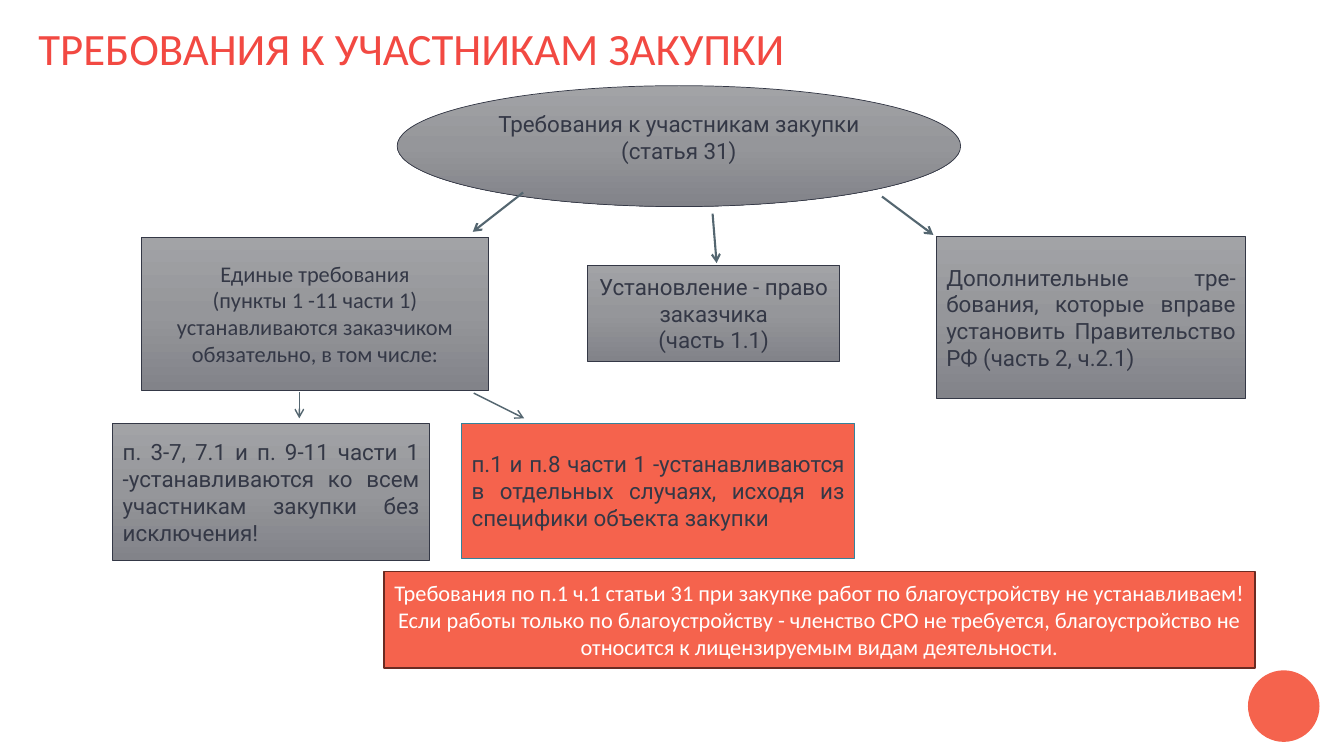
"""Build the slide on requirements for procurement participants."""
from copy import deepcopy
from dataclasses import dataclass

from lxml import etree
from pptx import Presentation
from pptx.dml.color import RGBColor
from pptx.enum.shapes import MSO_CONNECTOR, MSO_SHAPE
from pptx.enum.text import MSO_ANCHOR, PP_ALIGN
from pptx.oxml.ns import qn
from pptx.shapes.autoshape import Shape
from pptx.slide import Slide
from pptx.util import Pt

RECTANGLE, OVAL = MSO_SHAPE.RECTANGLE, MSO_SHAPE.OVAL
STRAIGHT = MSO_CONNECTOR.STRAIGHT
TOP, MIDDLE = MSO_ANCHOR.TOP, MSO_ANCHOR.MIDDLE
CENTER, JUSTIFY = PP_ALIGN.CENTER, PP_ALIGN.JUSTIFY

INK = RGBColor(0x34, 0x38, 0x46)
CORAL = RGBColor(0xF5, 0x63, 0x4D)
TITLE_RED = RGBColor(0xF2, 0x49, 0x42)
TEAL = RGBColor(0x33, 0x82, 0x9B)
BROWN = RGBColor(0x6B, 0x2B, 0x22)
ARROW_GREY = RGBColor(0x54, 0x66, 0x70)
WHITE = RGBColor(0xFF, 0xFF, 0xFF)
GREY_STOPS = (
    (0.0, RGBColor(0xA2, 0xA3, 0xA6)),
    (0.5, RGBColor(0x95, 0x96, 0x9A)),
    (1.0, RGBColor(0x82, 0x83, 0x89)),
)


@dataclass(frozen=True)
class Block:
    left: float
    top: float
    width: float
    height: float
    text: str
    alignment: PP_ALIGN = CENTER
    font_name: str = "Roboto"
    font_color: RGBColor = INK
    fill: RGBColor | None = None
    line: RGBColor = INK
    line_width: float = 0.5
    outline: MSO_SHAPE = RECTANGLE
    bottom_inset: float = 3.6


@dataclass(frozen=True)
class Arrow:
    start_x: float
    start_y: float
    end_x: float
    end_y: float
    width: float


BLOCKS = (
    Block(283.7, 61.2, 402.5, 86.4, "Требования к участникам закупки\n(статья 31)",
          outline=OVAL, bottom_inset=16.5),
    Block(100.8, 169.2, 248.4, 109.4,
          "Единые требования\n(пункты 1 -11 части 1) устанавливаются заказчиком "
          "обязательно, в том числе:", font_name="Calibri"),
    Block(419.8, 189.4, 180, 68.4, "Установление - право заказчика\n(часть 1.1)"),
    Block(329.8, 302.4, 280.8, 96.5,
          "п.1 и п.8 части 1 -устанавливаются в отдельных случаях, исходя из "
          "специфики объекта закупки", JUSTIFY, fill=CORAL, line=TEAL),
    Block(80.6, 302.4, 226.1, 97.9,
          "п. 3-7, 7.1 и п. 9-11 части 1 -устанавливаются ко всем участникам "
          "закупки без исключения!", JUSTIFY),
    Block(668.9, 169.2, 221, 115.2,
          "Дополнительные тре-бования, которые вправе установить Правительство "
          "РФ (часть 2, ч.2.1)", JUSTIFY),
    Block(274.3, 408.2, 622.1, 69.1,
          "Требования по п.1 ч.1 статьи 31 при закупке работ по благоустройству "
          "не устанавливаем! Если работы только по благоустройству - членство СРО "
          "не требуется, благоустройство не относится к лицензируемым видам "
          "деятельности.",
          font_name="Calibri", font_color=WHITE, fill=CORAL, line=BROWN, line_width=1),
)

ARROWS = (
    Arrow(373.7, 137.5, 337.7, 165.6, 1.5),
    Arrow(630, 140.4, 666.7, 167.8, 1.5),
    Arrow(509, 152.6, 511.9, 187.9, 1.5),
    Arrow(213.8, 280.1, 213.8, 298.8, 1),
    Arrow(338.4, 280.8, 374.4, 298.8, 1),
)


def fill_grey_gradient(shape: Shape) -> None:
    """Fill a shape with the three-stop vertical grey gradient."""
    shape.fill.gradient()
    shape.fill.gradient_angle = 270
    stop_list = shape._element.spPr.find(qn("a:gradFill")).find(qn("a:gsLst"))
    stop_list.insert(1, deepcopy(stop_list[0]))
    for stop, (position, color) in zip(shape.fill.gradient_stops, GREY_STOPS):
        stop.position = position
        stop.color.rgb = color


def add_title(slide: Slide, text: str) -> None:
    """Add the slide title."""
    text_frame = slide.shapes.add_textbox(Pt(27.4), Pt(15.8), Pt(824.4), Pt(51.8)).text_frame
    text_frame.word_wrap = True
    text_frame.vertical_anchor = TOP
    text_frame.margin_left = Pt(0)
    text_frame.text = text
    paragraph = text_frame.paragraphs[0]
    paragraph.line_spacing = 0.9
    font = paragraph.runs[0].font
    font.name, font.size, font.color.rgb = "Calibri", Pt(32), TITLE_RED


def add_block(slide: Slide, block: Block) -> None:
    """Add one outlined block with its text."""
    shape = slide.shapes.add_shape(
        block.outline, Pt(block.left), Pt(block.top), Pt(block.width), Pt(block.height))
    shape.shadow.inherit = False
    if block.fill is None:
        fill_grey_gradient(shape)
    else:
        shape.fill.solid()
        shape.fill.fore_color.rgb = block.fill
    shape.line.color.rgb = block.line
    shape.line.width = Pt(block.line_width)
    text_frame = shape.text_frame
    text_frame.word_wrap = True
    text_frame.vertical_anchor = MIDDLE
    text_frame.margin_bottom = Pt(block.bottom_inset)
    text_frame.text = block.text
    for paragraph in text_frame.paragraphs:
        paragraph.alignment = block.alignment
        font = paragraph.runs[0].font
        font.name, font.size, font.color.rgb = block.font_name, Pt(16), block.font_color


def add_arrow(slide: Slide, arrow: Arrow) -> None:
    """Add one straight connector with an open arrowhead at its end."""
    connector = slide.shapes.add_connector(
        STRAIGHT, Pt(arrow.start_x), Pt(arrow.start_y), Pt(arrow.end_x), Pt(arrow.end_y))
    connector.line.color.rgb = ARROW_GREY
    connector.line.width = Pt(arrow.width)
    properties = connector._element.spPr
    etree.SubElement(properties.find(qn("a:ln")), qn("a:tailEnd"), type="arrow")
    etree.SubElement(properties, qn("a:effectLst"))


def add_corner_circle(slide: Slide) -> None:
    """Add the plain circle in the lower right corner."""
    circle = slide.shapes.add_shape(OVAL, Pt(891.4), Pt(478.8), Pt(51.1), Pt(51.1))
    circle.shadow.inherit = False
    circle.fill.solid()
    circle.fill.fore_color.rgb = CORAL
    circle.line.fill.background()


def main() -> None:
    """Build and save the presentation."""
    presentation = Presentation()
    presentation.slide_width, presentation.slide_height = Pt(960), Pt(540)
    slide = presentation.slides.add_slide(presentation.slide_layouts[6])
    add_corner_circle(slide)
    add_title(slide, "ТРЕБОВАНИЯ К УЧАСТНИКАМ ЗАКУПКИ")
    for block in BLOCKS:
        add_block(slide, block)
    for arrow in ARROWS:
        add_arrow(slide, arrow)
    presentation.save("out.pptx")


if __name__ == "__main__":
    main()
